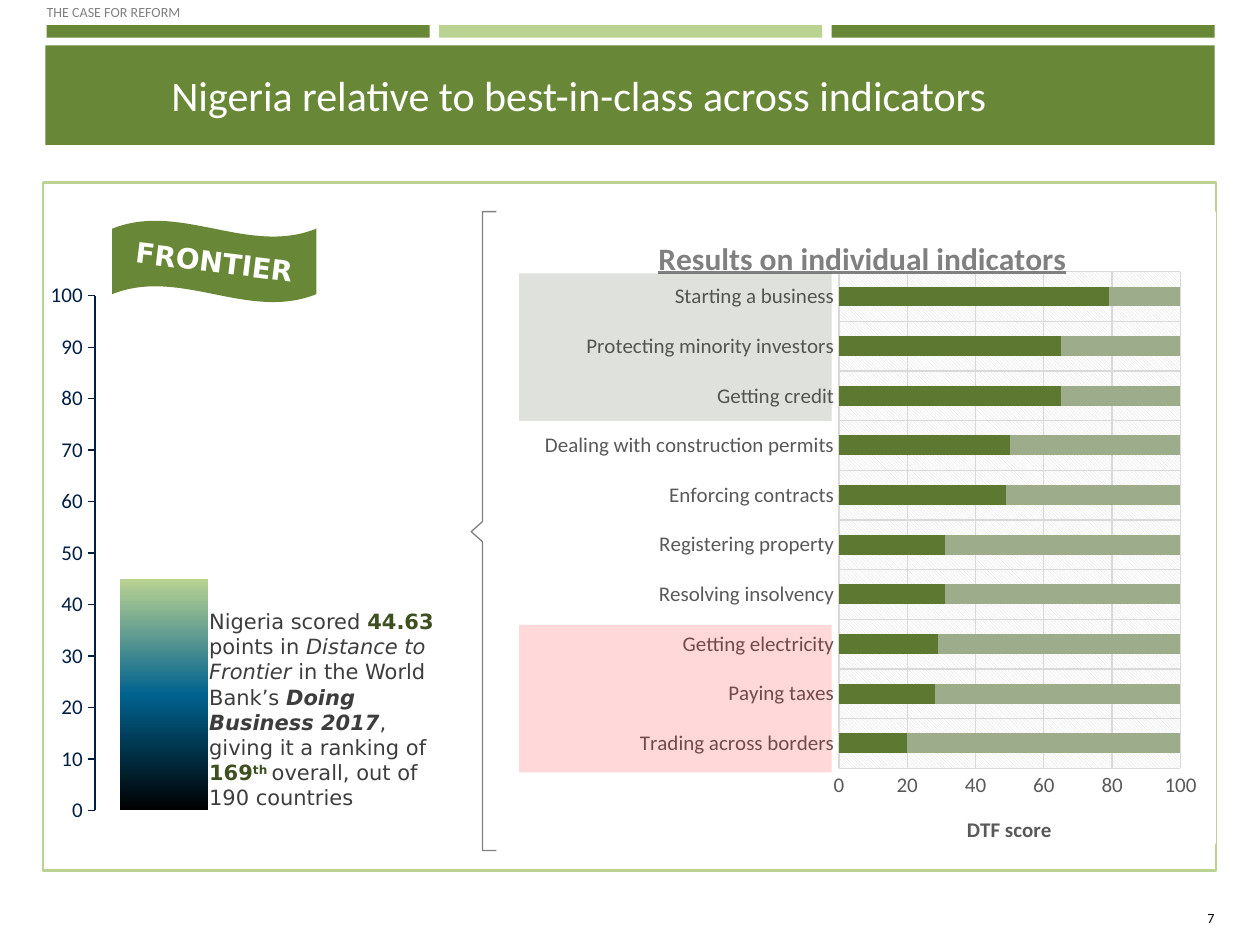
from dataclasses import dataclass

from lxml import etree
from pptx import Presentation
from pptx.chart.data import CategoryChartData
from pptx.dml.color import RGBColor
from pptx.enum import chart as ch, shapes as sh, text as tx
from pptx.oxml import parse_xml
from pptx.oxml.ns import nsdecls, qn
from pptx.util import Inches, Pt


@dataclass(frozen=True)
class Theme:
    font: str = "Calibri"
    wide: str = "DejaVu Sans"
    green: str = "698837"
    light: str = "BAD392"
    dark: str = "3E5020"
    ink: str = "3D3D3D"
    navy: str = "021F43"
    gray: str = "808080"
    label: str = "595959"
    grid: str = "D9D9D9"
    white: str = "FFFFFF"
    tiny: int = 8
    body: int = 12
    flag: int = 16
    head: int = 18
    title: int = 24


T = Theme()
SCORES = [
    ("Trading across borders", 20), ("Paying taxes", 28),
    ("Getting electricity", 29), ("Resolving insolvency", 31),
    ("Registering property", 31), ("Enforcing contracts", 49),
    ("Dealing with construction permits", 50), ("Getting credit", 65),
    ("Protecting minority investors", 65), ("Starting a business", 79),
]


def rgb(code):
    return RGBColor.from_string(code)


def style(font, size, color, name=T.font, bold=False, italic=False):
    font.size, font.name = Pt(size), name
    font.bold, font.italic = bold, italic
    font.color.rgb = rgb(color)


def add_run(para, words, *look, **more):
    run = para.add_run()
    run.text = words
    style(run.font, *look, **more)
    return run


def clear(frame, wrap=True, anchor=tx.MSO_ANCHOR.TOP):
    """Remove the margins and return the first paragraph."""
    frame.margin_left = frame.margin_right = 0
    frame.margin_top = frame.margin_bottom = 0
    frame.word_wrap, frame.vertical_anchor = wrap, anchor
    frame.auto_size = tx.MSO_AUTO_SIZE.NONE
    return frame.paragraphs[0]


def add_block(slide, box, fill, kind=sh.MSO_SHAPE.RECTANGLE, line=None, alpha=None):
    block = slide.shapes.add_shape(kind, *map(Inches, box))
    block.shadow.inherit = False
    block.fill.solid()
    block.fill.fore_color.rgb = rgb(fill)
    if alpha:
        color = block.fill._xPr.find(".//" + qn("a:srgbClr"))
        etree.SubElement(color, qn("a:alpha")).set("val", str(alpha * 1000))
    if line:
        block.line.color.rgb = rgb(line)
        block.line.width = Pt(1.5)
    else:
        block.line.fill.background()
    return block


def add_text(slide, box, **more):
    return clear(slide.shapes.add_textbox(*map(Inches, box)).text_frame, **more)


def place(node, x, y, w=None, h=None):
    """Give a chart title or plot area a fixed layout, in parts of the chart."""
    old = node.find(qn("c:layout"))
    if old is not None:
        node.remove(old)
    size = f'<c:w val="{w}"/><c:h val="{h}"/>' if w else ""
    inner = '<c:layoutTarget val="inner"/>' if w else ""
    layout = parse_xml(
        f'<c:layout {nsdecls("c")}><c:manualLayout>{inner}'
        '<c:xMode val="edge"/><c:yMode val="edge"/>'
        f'<c:x val="{x}"/><c:y val="{y}"/>{size}</c:manualLayout></c:layout>')
    node.insert(0 if w else 1, layout)


def props(fill):
    return parse_xml(f'<c:spPr {nsdecls("c", "a")}>{fill}'
                     '<a:ln><a:noFill/></a:ln></c:spPr>')


def add_chart(slide, kind, box, names, rows, gap, plot):
    data = CategoryChartData()
    data.categories = names
    for num, row in enumerate(rows, 1):
        data.add_series(f"Series {num}", row)
    chart = slide.shapes.add_chart(kind, *map(Inches, box), data).chart
    chart.has_legend = chart.has_title = False
    style(chart.font, 10, T.label)
    bars = chart.plots[0]
    bars.gap_width, bars.overlap, bars.vary_by_categories = gap, 100, False
    place(chart.element.find(".//" + qn("c:plotArea")), *plot)
    axis = chart.value_axis
    axis.minimum_scale, axis.maximum_scale = 0, 100
    return chart


def set_axis(axis, color, line, tick, grid):
    style(axis.tick_labels.font, T.body, color)
    axis.format.line.color.rgb = rgb(line)
    axis.format.line.width = Pt(0.75)
    axis.major_tick_mark, axis.minor_tick_mark = tick, ch.XL_TICK_MARK.NONE
    axis.has_major_gridlines = grid
    if grid:
        axis.major_gridlines.format.line.color.rgb = rgb(T.grid)
        axis.major_gridlines.format.line.width = Pt(0.75)


def set_title(title, words, size, color, x, y, under=False):
    run = add_run(title.text_frame.paragraphs[0], words, size, color, bold=True)
    run.font.underline = under
    place(title._element, x, y)


def add_gauge(slide):
    chart = add_chart(slide, ch.XL_CHART_TYPE.COLUMN_STACKED, (0.36, 2.17, 1.52, 4.44),
                      ["1"], [[45], [55]], 56, (0.26, 0.04, 0.72, 0.92))
    chart.category_axis.visible = False
    chart.value_axis.major_unit = 10
    set_axis(chart.value_axis, T.navy, T.navy, ch.XL_TICK_MARK.OUTSIDE, False)
    score, rest = chart.plots[0].series
    stops = "".join(
        f'<a:gs pos="{pos}000"><a:srgbClr val="{color}"/></a:gs>'
        for pos, color in [(0, T.light), (50, "01628F"), (100, "000000")])
    score._element.get_or_add_spPr().append(parse_xml(
        f'<a:gradFill {nsdecls("a")}><a:gsLst>{stops}</a:gsLst>'
        '<a:lin ang="5400000" scaled="0"/></a:gradFill>'))
    rest.format.fill.background()


def add_scores(slide):
    names, vals = zip(*SCORES)
    chart = add_chart(slide, ch.XL_CHART_TYPE.BAR_STACKED, (3.92, 1.68, 5.73, 5.06),
                      names, [vals, [100 - val for val in vals]], 150,
                      (0.478, 0.095, 0.473, 0.786))
    for axis in (chart.category_axis, chart.value_axis):
        set_axis(axis, T.label, T.grid, ch.XL_TICK_MARK.NONE, True)
    chart.value_axis.major_unit = 20
    labels = chart.value_axis.tick_labels
    labels.number_format, labels.number_format_is_linked = "0", False
    for part, color in zip(chart.plots[0].series, ("5D7931", "9DAD8C")):
        part.format.fill.solid()
        part.format.fill.fore_color.rgb = rgb(color)
    set_title(chart.chart_title, "Results on individual indicators",
              T.head, T.gray, 0.22, 0.03, under=True)
    set_title(chart.value_axis.axis_title, "DTF score", T.body, T.label, 0.65, 0.95)
    root = chart.element
    root.find(qn("c:chart")).addnext(props(
        f'<a:solidFill><a:srgbClr val="{T.white}"/></a:solidFill>'))
    root.find(".//" + qn("c:plotArea")).append(props(
        f'<a:pattFill prst="ltDnDiag"><a:fgClr><a:srgbClr val="{T.grid}"/></a:fgClr>'
        f'<a:bgClr><a:srgbClr val="{T.white}"/></a:bgClr></a:pattFill>'))


def add_flag(slide):
    flag = add_block(slide, (0.89, 1.75, 1.62, 0.65), T.green, sh.MSO_SHAPE.WAVE)
    flag.adjustments[0] = 0.1
    para = clear(flag.text_frame, wrap=False, anchor=tx.MSO_ANCHOR.MIDDLE)
    para.alignment = tx.PP_ALIGN.CENTER
    add_run(para, "FRONTIER", T.flag, T.white, T.wide, bold=True)
    flag.text_frame._txBody.bodyPr.set("rot", str(7 * 60000))


def add_note(slide):
    para = add_text(slide, (1.66, 4.83, 1.81, 1.62))
    for words, color, bold, italic in [
        ("Nigeria scored ", T.ink, False, False),
        ("44.63", T.dark, True, False),
        (" points in ", T.ink, False, False),
        ("Distance to Frontier", T.ink, False, True),
        (" in the World Bank’s ", T.ink, False, False),
        ("Doing Business 2017", T.ink, True, True),
        (", giving it a ranking of ", T.ink, False, False),
        ("169", T.dark, True, False),
        ("th ", T.dark, True, False),
        ("overall, out of 190 countries", T.ink, False, False),
    ]:
        run = add_run(para, words, T.body, color, T.wide, bold, italic)
        if words == "th ":
            run.font._element.set("baseline", "30000")


def add_brace(slide):
    pen = slide.shapes.build_freeform(Inches(3.94), Inches(6.75))
    spots = [(3.83, 6.75), (3.83, 4.3), (3.74, 4.22), (3.83, 4.14), (3.83, 1.68), (3.94, 1.68)]
    pen.add_line_segments([tuple(map(Inches, spot)) for spot in spots], close=False)
    brace = pen.convert_to_shape()
    brace.shadow.inherit = False
    brace.fill.background()
    brace.line.color.rgb = rgb(T.gray)
    brace.line.width = Pt(0.75)


def add_head(slide):
    add_block(slide, (0.36, 0.36, 9.28, 0.79), T.green)
    for num, color in enumerate((T.green, T.light, T.green)):
        add_block(slide, (0.37 + num * 3.115, 0.2, 3.04, 0.1), color)
    title = slide.shapes.title
    title.left, title.top, title.width, title.height = map(Inches, (1.36, 0.55, 8.14, 0.4))
    para = clear(title.text_frame, anchor=tx.MSO_ANCHOR.MIDDLE)
    para.alignment = tx.PP_ALIGN.LEFT
    add_run(para, "Nigeria relative to best-in-class across indicators", T.title, T.white)
    slide.shapes._spTree.append(title._element)
    add_run(add_text(slide, (0.37, 0.03, 1.07, 0.13), wrap=False),
            "THE CASE FOR REFORM", T.tiny, T.gray)
    page = add_text(slide, (9.5, 7.22, 0.14, 0.13), anchor=tx.MSO_ANCHOR.MIDDLE)
    page.alignment = tx.PP_ALIGN.RIGHT
    add_run(page, "7", T.tiny, "000000")


def main():
    deck = Presentation()
    deck.slide_width, deck.slide_height = Inches(10), Inches(7.5)
    slide = deck.slides.add_slide(deck.slide_layouts[5])
    add_head(slide)
    add_block(slide, (0.34, 1.45, 9.31, 5.46), T.white, line=T.light)
    add_gauge(slide)
    add_flag(slide)
    add_note(slide)
    add_scores(slide)
    for top, color in ((2.17, "2E3C18"), (4.96, "FF0000")):
        add_block(slide, (4.12, top, 2.48, 1.17), color, alpha=15)
    add_brace(slide)
    deck.save("out.pptx")


if __name__ == "__main__":
    main()
